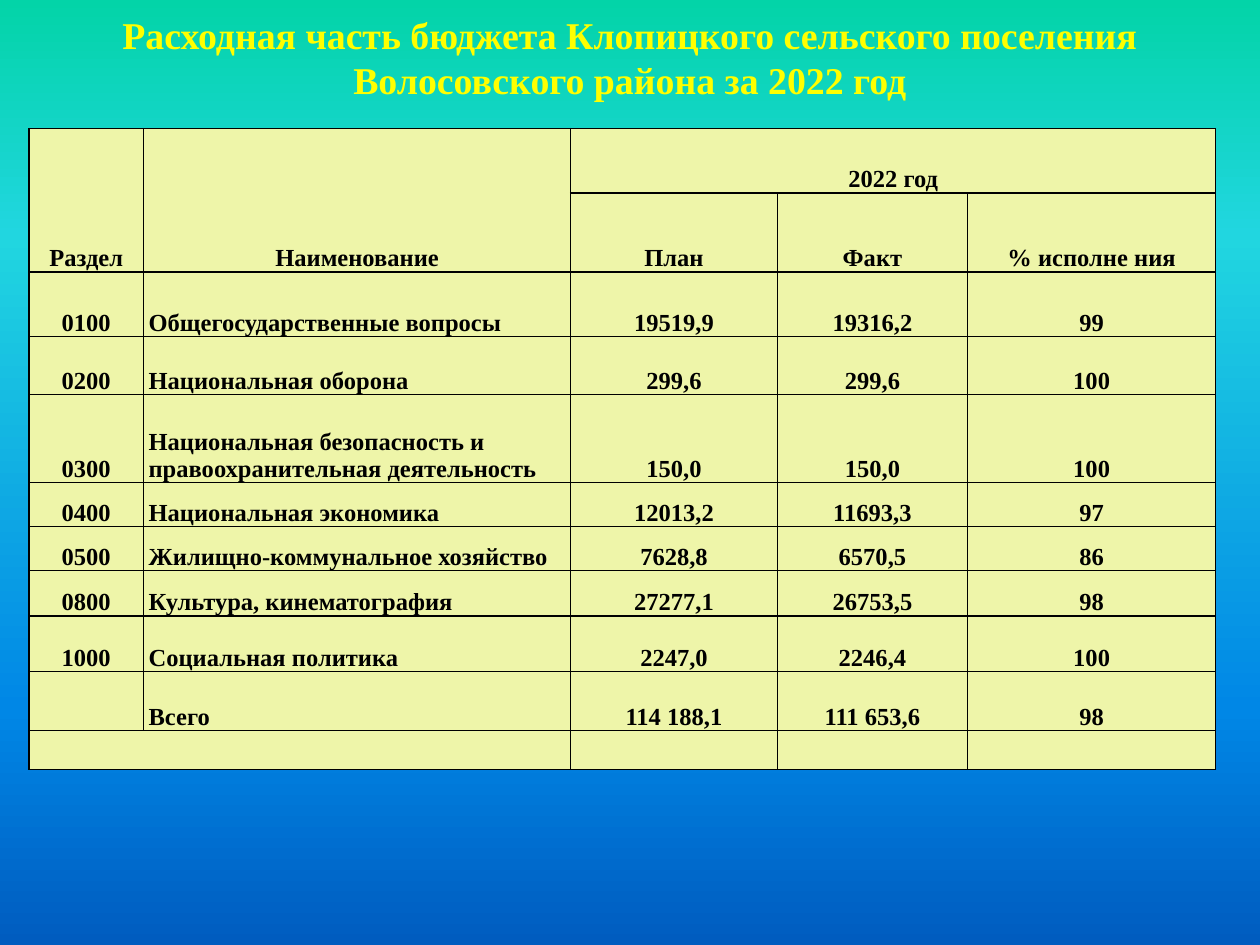
from copy import deepcopy
from dataclasses import dataclass

from lxml import etree
from pptx import Presentation, util as u
from pptx.dml.color import RGBColor
from pptx.enum import text
from pptx.oxml import ns


@dataclass(frozen=True)
class Theme:
    font: str = "Times New Roman"
    title_size: float = 21.6
    table_size: float = 14
    title_color: str = "FFFF00"
    table_color: str = "000000"
    cell_fill: str = "EEF5A9"
    border_color: str = "000000"
    border_width: float = 1
    background: tuple = ((0, "03D4A8"), (0.25, "21D6E0"), (0.75, "0087E6"), (1, "005CBF"))


@dataclass(frozen=True)
class BudgetRow:
    height: float
    section: str = ""
    name: str = ""
    plan: str = ""
    fact: str = ""
    percent: str = ""

    @property
    def values(self) -> tuple:
        return self.section, self.name, self.plan, self.fact, self.percent


@dataclass(frozen=True)
class Span:
    """First and last (row, column) of a merged block."""
    first: tuple
    last: tuple


THEME = Theme()
WIDTH, HEIGHT = u.Inches(10), u.Inches(7.5)
LEFT = u.Inches(0.23)
TABLE_TOP = u.Inches(1.02)
COLUMN_WIDTHS = (0.91, 3.39, 1.64, 1.51, 1.97)
NAME_COLUMN = 1
HEADER_ROWS = 2
TITLE = "Расходная часть бюджета Клопицкого сельского поселения Волосовского района за 2022 год"
ROWS = (
    BudgetRow(0.51, "Раздел", "Наименование", "2022 год"),
    BudgetRow(0.63, plan="План", fact="Факт", percent="% исполне ния"),
    BudgetRow(0.51, "0100", "Общегосударственные вопросы", "19519,9", "19316,2", "99"),
    BudgetRow(0.46, "0200", "Национальная оборона", "299,6", "299,6", "100"),
    BudgetRow(0.7, "0300", "Национальная безопасность и правоохранительная деятельность",
              "150,0", "150,0", "100"),
    BudgetRow(0.35, "0400", "Национальная экономика", "12013,2", "11693,3", "97"),
    BudgetRow(0.35, "0500", "Жилищно-коммунальное хозяйство", "7628,8", "6570,5", "86"),
    BudgetRow(0.36, "0800", "Культура, кинематография", "27277,1", "26753,5", "98"),
    BudgetRow(0.44, "1000", "Социальная политика", "2247,0", "2246,4", "100"),
    BudgetRow(0.47, "", "Всего", "114 188,1", "111 653,6", "98"),
    BudgetRow(0.31),
)
SPANS = (Span((0, 0), (1, 0)), Span((0, 1), (1, 1)), Span((0, 2), (0, 4)),
         Span((10, 0), (10, 1)))


def paint_background(slide) -> None:
    fill = slide.background.fill
    fill.gradient()
    fill.gradient_angle = 270
    stop_list = slide.element.find(".//" + ns.qn("a:gsLst"))
    while len(stop_list) < len(THEME.background):
        stop_list.append(deepcopy(stop_list[-1]))
    for stop, (position, color) in zip(fill.gradient_stops, THEME.background):
        stop.position = position
        stop.color.rgb = RGBColor.from_string(color)


def add_run(paragraph, content: str, size: float, color: str) -> None:
    run = paragraph.add_run()
    run.text = content
    run.font.name = THEME.font
    run.font.size = u.Pt(size)
    run.font.bold = True
    run.font.color.rgb = RGBColor.from_string(color)


def add_title(slide) -> None:
    box = slide.shapes.add_textbox(LEFT, 0, WIDTH - 2 * LEFT, u.Inches(0.86))
    frame = box.text_frame
    frame.word_wrap = True
    frame.vertical_anchor = text.MSO_ANCHOR.BOTTOM
    paragraph = frame.paragraphs[0]
    paragraph.alignment = text.PP_ALIGN.CENTER
    add_run(paragraph, TITLE, THEME.title_size, THEME.title_color)


def add_borders(cell) -> None:
    properties = cell._tc.get_or_add_tcPr()
    for side in ("lnL", "lnR", "lnT", "lnB"):
        line = etree.SubElement(properties, ns.qn(f"a:{side}"), w=str(u.Pt(THEME.border_width)))
        fill = etree.SubElement(line, ns.qn("a:solidFill"))
        etree.SubElement(fill, ns.qn("a:srgbClr"), val=THEME.border_color)


def style_cell(cell, content: str, is_name: bool) -> None:
    add_borders(cell)
    cell.fill.solid()
    cell.fill.fore_color.rgb = RGBColor.from_string(THEME.cell_fill)
    cell.vertical_anchor = text.MSO_ANCHOR.BOTTOM
    cell.margin_left = u.Inches(0.04 if is_name else 0.01)
    cell.margin_right = cell.margin_top = u.Inches(0.01)
    cell.margin_bottom = 0
    if content:
        paragraph = cell.text_frame.paragraphs[0]
        paragraph.alignment = text.PP_ALIGN.LEFT if is_name else text.PP_ALIGN.CENTER
        add_run(paragraph, content, THEME.table_size, THEME.table_color)


def add_budget_table(slide) -> None:
    table = slide.shapes.add_table(
        len(ROWS), len(COLUMN_WIDTHS), LEFT, TABLE_TOP,
        u.Inches(sum(COLUMN_WIDTHS)), u.Inches(sum(row.height for row in ROWS))).table
    table.first_row = table.horz_banding = False
    for column, width in zip(table.columns, COLUMN_WIDTHS):
        column.width = u.Inches(width)
    for span in SPANS:
        table.cell(*span.first).merge(table.cell(*span.last))
    for row_index, row in enumerate(ROWS):
        table.rows[row_index].height = u.Inches(row.height)
        for column_index, content in enumerate(row.values):
            is_name = column_index == NAME_COLUMN and row_index >= HEADER_ROWS
            style_cell(table.cell(row_index, column_index), content, is_name)


def main() -> None:
    presentation = Presentation()
    presentation.slide_width, presentation.slide_height = WIDTH, HEIGHT
    slide = presentation.slides.add_slide(presentation.slide_layouts[6])
    paint_background(slide)
    add_title(slide)
    add_budget_table(slide)
    presentation.save("out.pptx")


if __name__ == "__main__":
    main()
